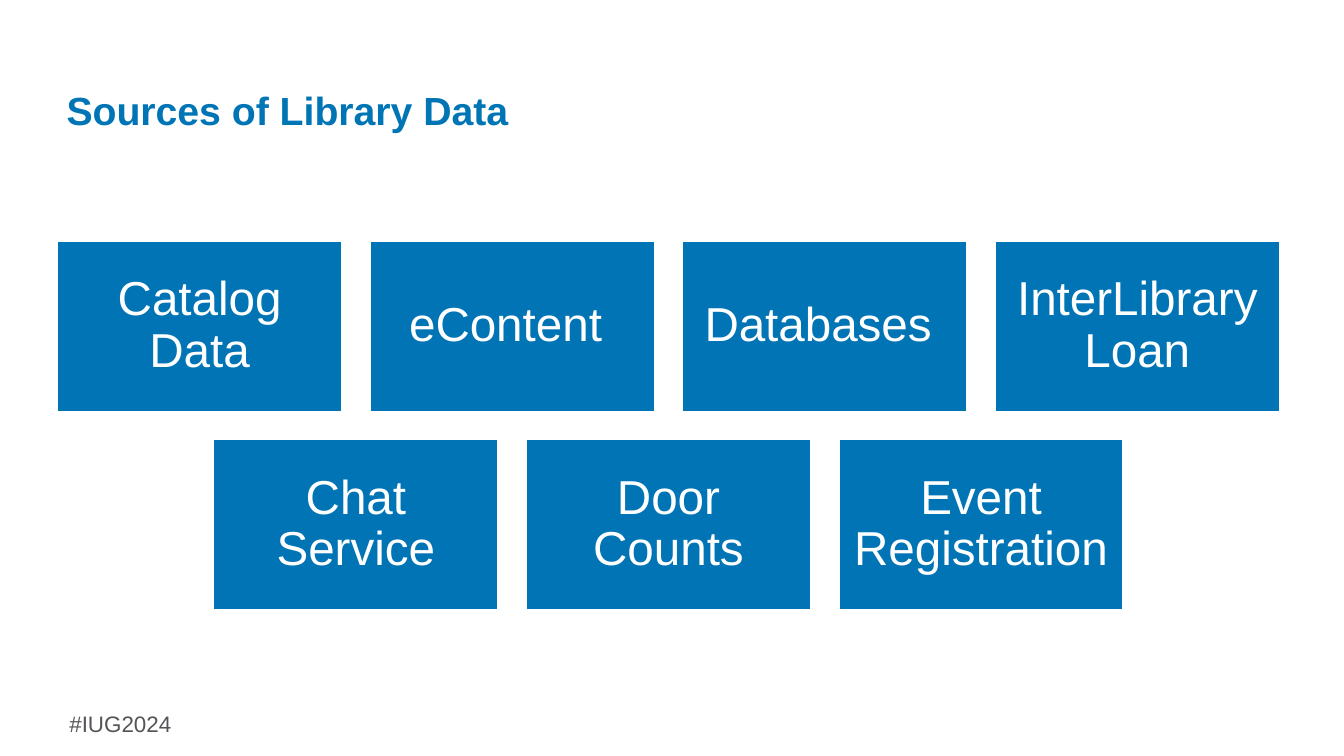
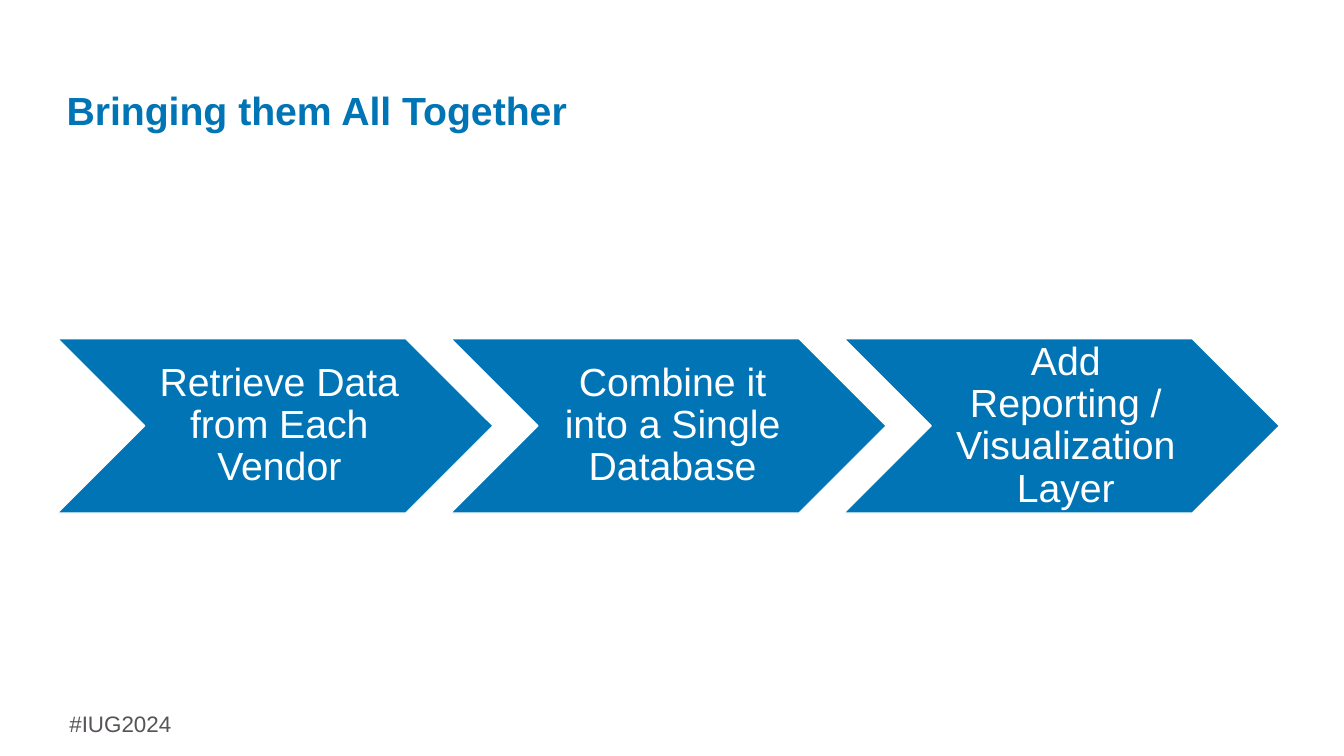
from pptx import Presentation
from pptx.dml.color import RGBColor
from pptx.enum.shapes import MSO_SHAPE
from pptx.enum.text import MSO_ANCHOR, MSO_AUTO_SIZE, PP_ALIGN
from pptx.util import Emu, Pt

RECT, CHEVRON = MSO_SHAPE.RECTANGLE, MSO_SHAPE.CHEVRON
LEFT, CENTER = PP_ALIGN.LEFT, PP_ALIGN.CENTER
TOP, MIDDLE = MSO_ANCHOR.TOP, MSO_ANCHOR.MIDDLE

FONT = "Arial"
TITLE_BLUE, FILL_BLUE, WHITE, GREY = "0075B5", "0074B5", "FFFFFF", "575358"
TITLE_ONLY = 5
PX = 9144  # 100 px to the inch

TITLE_BOX = (56, 72, 1212, 80)
FOOTER_BOX = (59, 700, 200, 37)
TEXT_INSETS = (10, 5, 10, 5)
CARD_GRID_BOX = (57, 239, 1212, 366)
PROCESS_BOX = (57, 336, 1212, 173)


def px(*lengths):
    return [Emu(n * PX) for n in lengths]


def color(hex_string):
    return RGBColor.from_string(hex_string)


def write(shape, text, size, hex_color, insets=TEXT_INSETS, align=CENTER,
          anchor=MIDDLE, spacing=0.9, bold=False):
    tf = shape.text_frame
    tf.text = text
    tf.word_wrap = True
    tf.auto_size = MSO_AUTO_SIZE.NONE
    tf.vertical_anchor = anchor
    tf.margin_left, tf.margin_top, tf.margin_right, tf.margin_bottom = px(*insets)
    p = tf.paragraphs[0]
    p.alignment = align
    p.line_spacing = spacing
    font = p.runs[0].font
    font.name, font.size, font.bold = FONT, Pt(size), bold
    font.color.rgb = color(hex_color)


def add_block(s, kind, box, text, size, insets):
    sp = s.shapes.add_shape(kind, *px(*box))
    sp.shadow.inherit = False
    sp.fill.solid()
    sp.fill.fore_color.rgb = color(FILL_BLUE)
    sp.line.color.rgb = color(WHITE)
    sp.line.width = Pt(1)
    write(sp, text, size, WHITE, insets)
    return sp


def add_base_slide(prs, title):
    s = prs.slides.add_slide(prs.slide_layouts[TITLE_ONLY])
    # Footer
    footer = s.shapes.add_textbox(*px(*FOOTER_BOX))
    write(footer, "#IUG2024", 16, GREY, align=LEFT, anchor=TOP, spacing=1.0)
    # Title
    t = s.shapes.title
    t.left, t.top, t.width, t.height = px(*TITLE_BOX)
    write(t, title, 28, TITLE_BLUE, align=LEFT, bold=True)
    return s


def add_card_grid(s, box, rows):
    """Rows of equal cards, each row centred in the box."""
    x, y, w, h = box
    gap, card_h = 28, 169
    columns = max(len(row) for row in rows)
    card_w = (w - gap * (columns - 1)) // columns
    row_step = (h - card_h) // (len(rows) - 1)
    for r, row in enumerate(rows):
        row_w = len(row) * (card_w + gap) - gap
        left = x + (w - row_w) // 2
        for c, text in enumerate(row):
            card = (left + c * (card_w + gap), y + r * row_step, card_w, card_h)
            add_block(s, RECT, card, text, 34, (14, 14, 14, 14))


def add_process(s, box, steps):
    """Equal chevrons from the left to the right edge of the box."""
    x, y, w, h = box
    step_w = h * 5 // 2
    for i, text in enumerate(steps):
        left = x + (w - step_w) * i // (len(steps) - 1)
        sp = add_block(s, CHEVRON, (left, y, step_w, h), text, 28, (12, 4, 4, 4))
        sp.adjustments[0] = 0.5


def main():
    prs = Presentation()
    prs.slide_width, prs.slide_height = px(1333, 750)

    # Data sources
    s = add_base_slide(prs, "Sources of Library Data")
    add_card_grid(s, CARD_GRID_BOX, [
        ["Catalog Data", "eContent ", "Databases ", "InterLibrary Loan"],
        ["Chat Service", "Door Counts", "Event Registration"],
    ])

    # Integration steps
    s = add_base_slide(prs, "Bringing them All Together")
    add_process(s, PROCESS_BOX, [
        "Retrieve Data from Each Vendor",
        "Combine it into a Single Database",
        "Add Reporting / Visualization Layer",
    ])

    prs.save("out.pptx")


if __name__ == "__main__":
    main()
